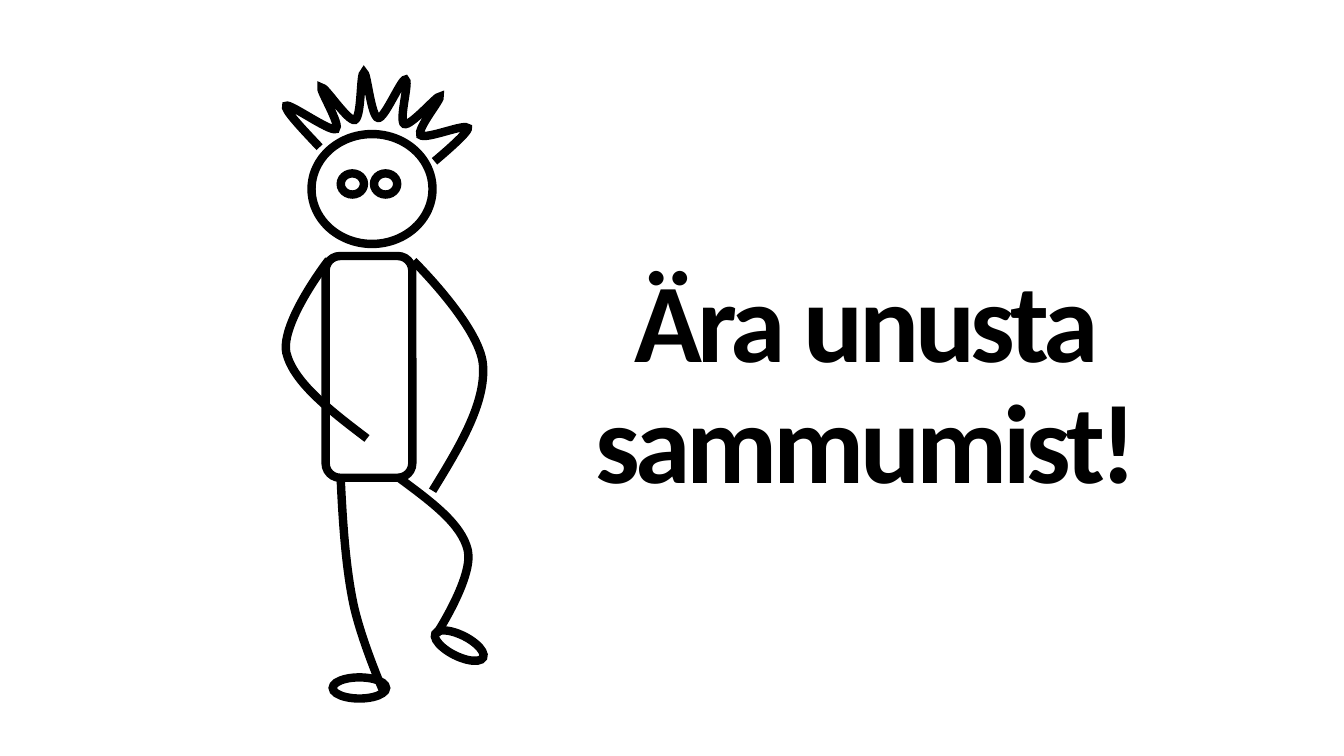
import math

import pptx
import pptx.dml.color
import pptx.enum.shapes
import pptx.enum.text
import pptx.oxml.ns
import pptx.util
from lxml import etree

Inches = pptx.util.Inches
Pt = pptx.util.Pt
qn = pptx.oxml.ns.qn
ShapeKind = pptx.enum.shapes.MSO_SHAPE
BLACK = pptx.dml.color.RGBColor(0x00, 0x00, 0x00)

HAIR = [(3.17, 1.46),
        (2.99, 1.27), (2.81, 1.08), (2.84, 1.05),
        (2.87, 1.02), (3.27, 1.31), (3.33, 1.28),
        (3.39, 1.25), (3.16, 0.88), (3.19, 0.87),
        (3.22, 0.85), (3.45, 1.21), (3.52, 1.19),
        (3.59, 1.16), (3.57, 0.72), (3.61, 0.72),
        (3.64, 0.71), (3.68, 1.16), (3.75, 1.17),
        (3.81, 1.19), (3.98, 0.78), (4.02, 0.79),
        (4.07, 0.79), (3.95, 1.2), (4.01, 1.23),
        (4.07, 1.26), (4.34, 0.94), (4.36, 0.96),
        (4.39, 0.97), (4.13, 1.28), (4.17, 1.34),
        (4.22, 1.39), (4.62, 1.22), (4.64, 1.27),
        (4.66, 1.31), (4.31, 1.6), (4.31, 1.6)]
LEFT_ARM = [(3.64, 4.35), (3.27, 4.07), (2.91, 3.79), (2.84, 3.5),
            (2.78, 3.2), (3.26, 2.58), (3.26, 2.58)]
RIGHT_ARM = [(4.29, 4.87), (4.56, 4.43), (4.82, 4), (4.79, 3.62),
             (4.76, 3.24), (4.1, 2.59), (4.1, 2.59)]
LEFT_LEG = [(3.38, 4.75), (3.4, 5.18), (3.43, 5.61), (3.5, 5.96),
            (3.57, 6.32), (3.8, 6.85), (3.8, 6.85)]
RIGHT_LEG = [(3.97, 4.75), (4.28, 4.98), (4.58, 5.2), (4.64, 5.46),
             (4.7, 5.72), (4.33, 6.29), (4.33, 6.29)]


def turn_back(points, rotation, center):
    """Return the points in EMU, turned back by the rotation about the center."""
    cosine = math.cos(math.radians(rotation))
    sine = math.sin(math.radians(rotation))
    middle_x, middle_y = center
    return [(Inches(middle_x + (x - middle_x) * cosine + (y - middle_y) * sine),
             Inches(middle_y + (y - middle_y) * cosine - (x - middle_x) * sine))
            for x, y in points]


class Sketch:
    """Draws a line figure and a headline on one slide."""

    def __init__(self, slide, font="Calibri", color=BLACK, line_width=6):
        self.slide = slide
        self.figure = slide.shapes.add_group_shape()
        self.font = font
        self.color = color
        self.line_width = line_width

    def outline(self, shape):
        """Give a shape the plain figure outline."""
        shape.shadow.inherit = False
        shape.fill.background()
        shape.line.color.rgb = self.color
        shape.line.width = Pt(self.line_width)
        join = etree.SubElement(shape.line._get_or_add_ln(), qn("a:miter"))
        join.set("lim", "800000")

    def preset(self, kind, left, top, width, height, rotation=0):
        """Add an outlined preset shape to the figure."""
        shape = self.figure.shapes.add_shape(
            kind, Inches(left), Inches(top), Inches(width), Inches(height))
        shape.rotation = rotation
        self.outline(shape)

    def curve(self, points, rotation=0, center=(0, 0)):
        """Add an open chain of cubic curves to the figure."""
        points = turn_back(points, rotation, center)
        anchors = points[::3]
        left = min(x for x, y in anchors)
        top = min(y for x, y in anchors)
        builder = self.figure.shapes.build_freeform(*anchors[0])
        builder.add_line_segments(anchors[1:], close=False)
        shape = builder.convert_to_shape()
        outline = shape._element.find(".//" + qn("a:path"))
        for straight in outline.findall(qn("a:lnTo")):
            outline.remove(straight)
        for first in range(1, len(points), 3):
            cubic = etree.SubElement(outline, qn("a:cubicBezTo"))
            for x, y in points[first:first + 3]:
                etree.SubElement(cubic, qn("a:pt"), x=str(x - left), y=str(y - top))
        shape.rotation = rotation
        self.outline(shape)

    def headline(self, text, left, top, width, height):
        """Add the large centred text."""
        box = self.slide.shapes.add_textbox(
            Inches(left), Inches(top), Inches(width), Inches(height))
        frame = box.text_frame
        frame.word_wrap = True
        frame.vertical_anchor = pptx.enum.text.MSO_ANCHOR.MIDDLE
        frame.margin_left = frame.margin_right = Inches(0.13)
        frame.margin_top = frame.margin_bottom = Inches(0.07)
        paragraph = frame.paragraphs[0]
        paragraph.text = text
        paragraph.alignment = pptx.enum.text.PP_ALIGN.CENTER
        paragraph.line_spacing = 0.9
        for run in paragraph.runs:
            run.font.name = self.font
            run.font.size = Pt(80)
            run.font.bold = True
            run.font.color.rgb = self.color
            run._r.get_or_add_rPr().set("spc", "-300")


def main():
    """Build and save the slide."""
    presentation = pptx.Presentation()
    presentation.slide_width = Inches(13.33)
    presentation.slide_height = Inches(7.5)
    slide = presentation.slides.add_slide(presentation.slide_layouts[6])
    sketch = Sketch(slide)
    sketch.preset(ShapeKind.ROUNDED_RECTANGLE, 3.23, 2.54, 0.86, 2.2)
    sketch.preset(ShapeKind.OVAL, 3.09, 1.33, 1.2, 1.09)
    sketch.curve(LEFT_LEG, 342, (3.58, 5.8))
    sketch.curve(HAIR)
    for left, top, rotation in ((3.3, 6.72, 0), (4.29, 6.3, 26.5)):
        sketch.preset(ShapeKind.OVAL, left, top, 0.53, 0.21, rotation)
    sketch.curve(LEFT_ARM)
    sketch.curve(RIGHT_ARM, 345.6, (4.4, 3.68))
    sketch.curve(RIGHT_LEG)
    for eye_left in (3.38, 3.71):
        sketch.preset(ShapeKind.OVAL, eye_left, 1.72, 0.23, 0.21)
    sketch.headline("Ära unusta\vsammumist!", 5.48, 0.35, 6.23, 6.97)
    presentation.save("out.pptx")


if __name__ == "__main__":
    main()
